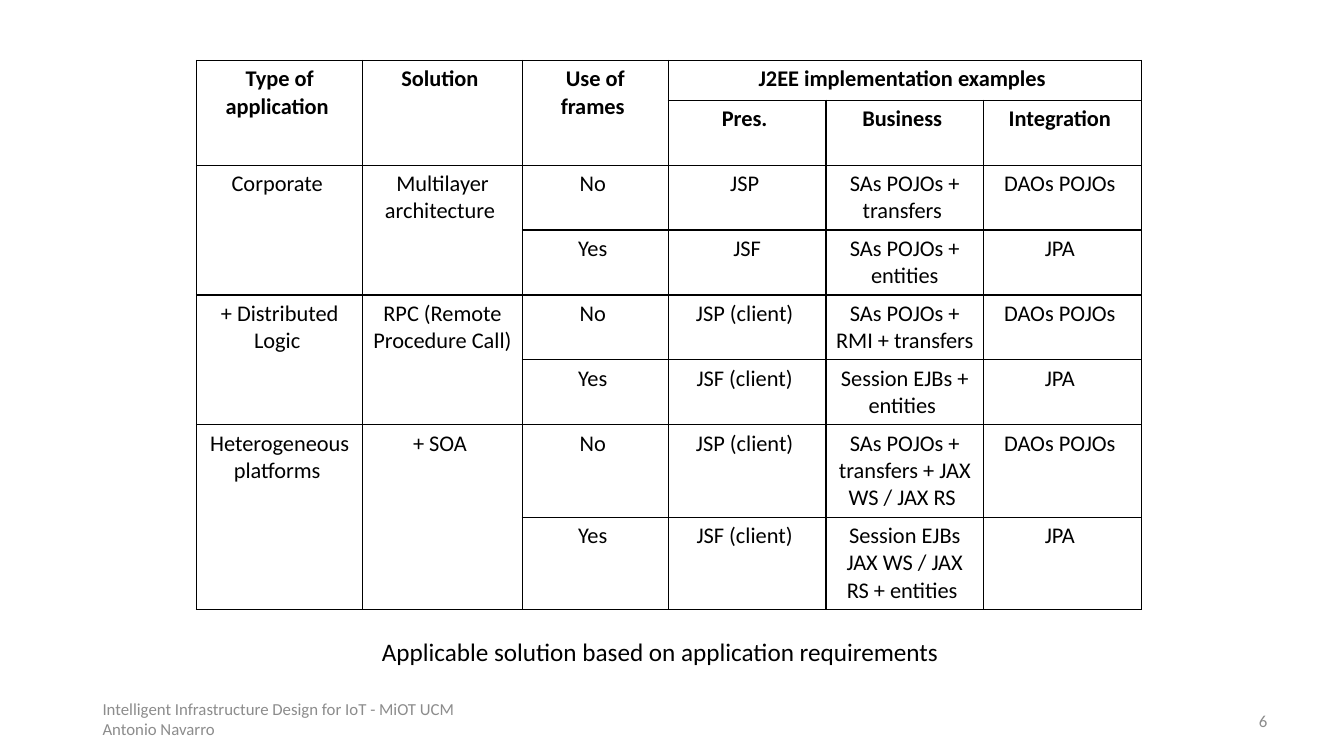
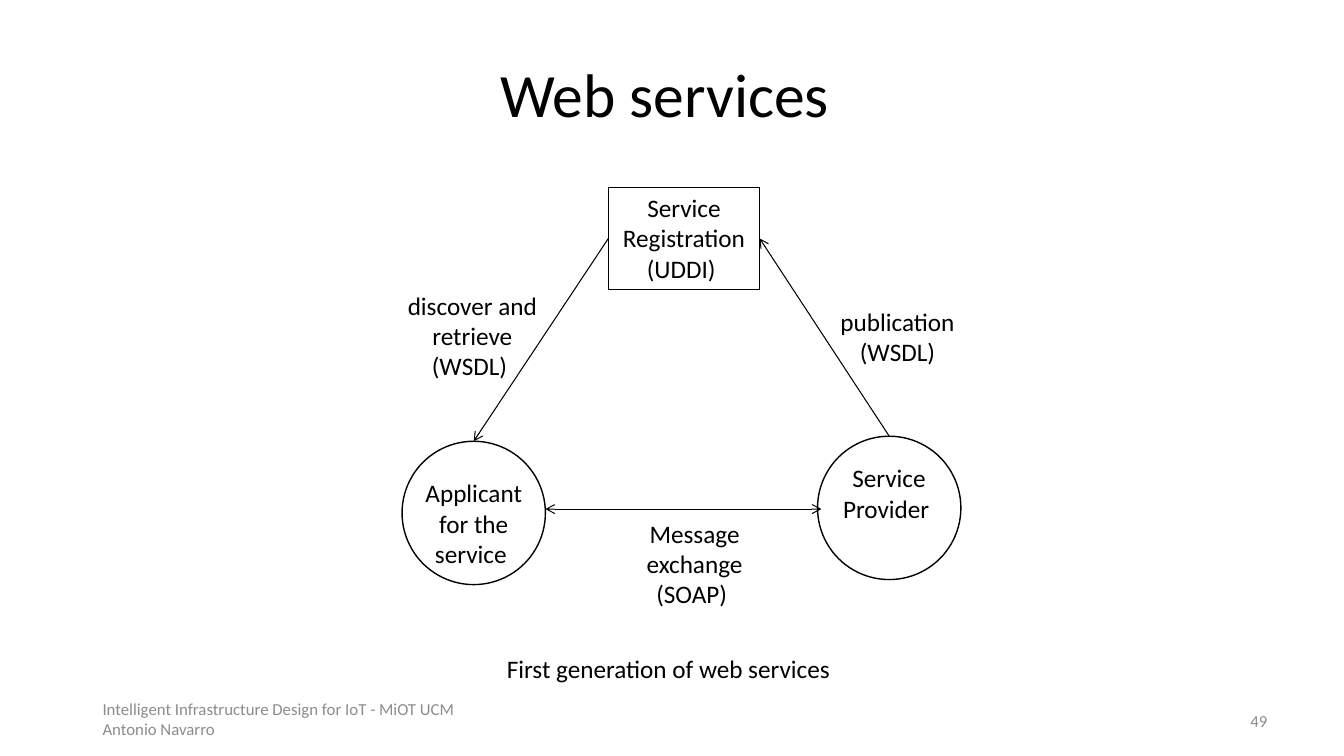
from dataclasses import dataclass

from lxml.etree import SubElement
from pptx import Presentation
from pptx.dml.color import RGBColor
from pptx.enum.shapes import MSO_CONNECTOR, MSO_SHAPE
from pptx.enum.text import MSO_ANCHOR, PP_ALIGN
from pptx.oxml.ns import qn
from pptx.util import Pt

# Shared look
BLACK = RGBColor(0, 0, 0)
GREY = RGBColor(0x8C, 0x8C, 0x8C)
FONT = "Calibri"
AUTHOR = "Intelligent Infrastructure Design for IoT - MiOT UCM\nAntonio Navarro"


@dataclass(frozen=True)
class Box:
    x: float
    y: float
    w: float
    h: float

    def pts(self) -> tuple:
        return Pt(self.x), Pt(self.y), Pt(self.w), Pt(self.h)


@dataclass(frozen=True)
class Style:
    size: float = 18
    color: RGBColor = BLACK
    bold: bool = False
    align: PP_ALIGN = PP_ALIGN.CENTER
    anchor: MSO_ANCHOR = MSO_ANCHOR.TOP


@dataclass(frozen=True)
class Label:
    text: str
    box: Box


@dataclass(frozen=True)
class Arrow:
    start: tuple
    end: tuple
    both: bool = False


BODY = Style()
TITLE = Style(44, anchor=MSO_ANCHOR.MIDDLE)
CELL = Style(16)
HEAD = Style(16, bold=True)
FOOT = Style(12, GREY, align=PP_ALIGN.LEFT, anchor=MSO_ANCHOR.MIDDLE)
PAGE = Style(12, GREY, align=PP_ALIGN.RIGHT, anchor=MSO_ANCHOR.MIDDLE)

# Solution table: text by row, None where a merged cell covers
ROWS = [
    ["Type of application ", "Solution ", "Use of frames ",
     "J2EE implementation examples ", None, None],
    [None, None, None, "Pres. ", "Business ", "Integration "],
    ["Corporate ", "Multilayer architecture ", "No ", "JSP ",
     "SAs POJOs + transfers ", "DAOs POJOs "],
    [None, None, "Yes ", "JSF", "SAs POJOs + entities", "JPA "],
    ["+ Distributed Logic ", "RPC (Remote Procedure Call) ", "No ",
     "JSP (client) ", "SAs POJOs + RMI + transfers ", "DAOs POJOs "],
    [None, None, "Yes ", "JSF (client) ", "Session EJBs + entities ", "JPA "],
    ["Heterogeneous platforms ", "+ SOA ", "No ", "JSP (client) ",
     "SAs POJOs + transfers + JAX WS / JAX RS ", "DAOs POJOs "],
    [None, None, "Yes ", "JSF (client) ",
     "Session EJBs JAX WS / JAX RS + entities ", "JPA "],
]
WIDTHS = [118.8, 113.8, 104.4] + [112.6] * 3
HEIGHTS = [28.4] + [46.4] * 5 + [66] * 2
MERGES = [((0, 3), (0, 5)), ((0, 2), (1, 2))]
MERGES += [((r, c), (r + 1, c)) for r in range(0, 8, 2) for c in (0, 1)]

# Web service diagram
RING = 102.4
ASKER = Box(287.2, 315.2, RING, RING)
MAKER = Box(584, 311.6, RING, RING)
LABELS = [
    Label("Applicant for the service ", Box(287.2, 337.7, 102.4, 51)),
    Label("Service Provider ", Box(586.8, 326.9, 96.5, 73)),
    Label("publication\n(WSDL)", Box(586, 215.3, 110.2, 51)),
    Label("discover and retrieve (WSDL) ", Box(279.4, 203.8, 116, 73)),
    Label("Message exchange (SOAP) ", Box(429.1, 366.5, 134, 73)),
    Label("First generation of web services", Box(335, 463, 285, 29)),
]


def write(frame, text: str, style: Style) -> None:
    """Fill a text frame, one paragraph per line."""
    frame.word_wrap = True
    frame.vertical_anchor = style.anchor
    frame.text = text
    look = {"name": FONT, "size": Pt(style.size), "bold": style.bold}
    for para in frame.paragraphs:
        para.alignment = style.align
        for run in para.runs:
            for key, value in look.items():
                setattr(run.font, key, value)
            run.font.color.rgb = style.color


def label(slide, item: Label, style: Style = BODY) -> None:
    write(slide.shapes.add_textbox(*item.box.pts()).text_frame, item.text, style)


def footer(slide, page: int) -> None:
    label(slide, Label(AUTHOR, Box(66.2, 499, 324, 28.8)), FOOT)
    label(slide, Label(str(page), Box(688.3, 500.4, 224, 28.8)), PAGE)


def outline(slide, kind: MSO_SHAPE, box: Box, width: float):
    shape = slide.shapes.add_shape(kind, *box.pts())
    shape.shadow.inherit = False
    shape.fill.background()
    shape.line.color.rgb = BLACK
    shape.line.width = Pt(width)
    return shape


def arrow(slide, item: Arrow):
    ends = [Pt(v) for v in item.start + item.end]
    line = slide.shapes.add_connector(MSO_CONNECTOR.STRAIGHT, *ends)
    line.line.color.rgb = BLACK
    line.line.width = Pt(0.75)
    props = line.element.spPr
    stroke = props.find(qn("a:ln"))
    for tag in ("a:headEnd", "a:tailEnd") if item.both else ("a:tailEnd",):
        SubElement(stroke, qn(tag), type="arrow")
    SubElement(props, qn("a:effectLst"))
    return line


def border(cell) -> None:
    """Draw a thin black line on each side of a table cell element."""
    props = cell.get_or_add_tcPr()
    for spot, side in enumerate("LRTB"):
        line = SubElement(props, qn("a:ln" + side), w=str(Pt(1)))
        fill = SubElement(line, qn("a:solidFill"))
        SubElement(fill, qn("a:srgbClr"), val=str(BLACK))
        props.insert(spot, line)


def grid(slide) -> None:
    box = Box(140.4, 43.2, sum(WIDTHS), sum(HEIGHTS))
    frame = slide.shapes.add_table(len(ROWS), len(WIDTHS), *box.pts())
    table = frame.table
    table.first_row = table.horz_banding = False
    for col, width in zip(table.columns, WIDTHS):
        col.width = Pt(width)
    for row, height in zip(table.rows, HEIGHTS):
        row.height = Pt(height)
    for first, last in MERGES:
        table.cell(*first).merge(table.cell(*last))
    for r, texts in enumerate(ROWS):
        for c, text in enumerate(texts):
            cell = table.cell(r, c)
            cell.fill.background()
            if text:
                write(cell.text_frame, text, HEAD if r < 2 else CELL)
    for item in frame.element.iter(qn("a:tc")):
        border(item)


def solve(deck) -> None:
    """Table of solutions by application type."""
    slide = deck.slides.add_slide(deck.slide_layouts[6])
    grid(slide)
    label(slide, Label("Applicable solution based on application requirements",
                       Box(256, 450.7, 431, 29)))
    footer(slide, 6)


def serve(deck) -> None:
    """Triangle of web service roles."""
    slide = deck.slides.add_slide(deck.slide_layouts[5])
    title = slide.shapes.title
    spots = Box(48, 21.6, 864, 90).pts()
    for key, value in zip(("left", "top", "width", "height"), spots):
        setattr(title, key, value)
    write(title.text_frame, "Web services ", TITLE)

    # Roles
    store = outline(slide, MSO_SHAPE.RECTANGLE, Box(434.6, 133.9, 108, 72.8), 0.75)
    write(store.text_frame, "Service Registration (UDDI) ", BODY)
    asker, maker = [outline(slide, MSO_SHAPE.OVAL, ring, 1) for ring in (ASKER, MAKER)]

    # Exchanges
    find = arrow(slide, Arrow((434.6, 170.3), (338.4, 315.2)))
    find.begin_connect(store, 1)
    find.end_connect(asker, 0)
    arrow(slide, Arrow((389.6, 363.6), (586.8, 363.6), both=True))
    post = arrow(slide, Arrow((635.2, 311.6), (542.6, 170.3)))
    post.begin_connect(maker, 0)
    post.end_connect(store, 3)

    for item in LABELS:
        label(slide, item)
    footer(slide, 49)


def main() -> None:
    deck = Presentation()
    deck.slide_width, deck.slide_height = Pt(960), Pt(540)
    solve(deck)
    serve(deck)
    deck.save("out.pptx")


if __name__ == "__main__":
    main()
